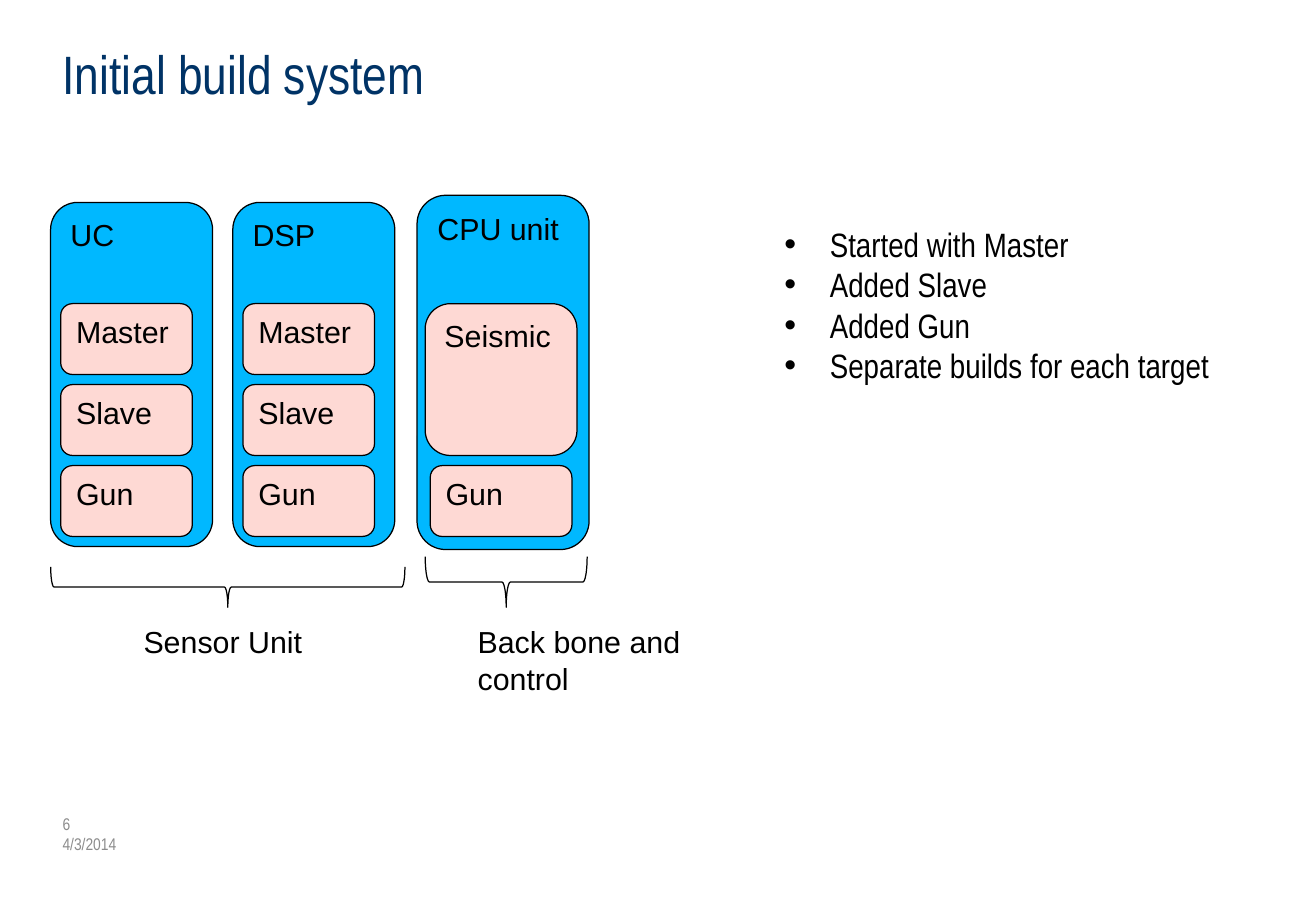
from pptx import Presentation, util as u
from pptx.dml.color import RGBColor
from pptx.enum import shapes, text
from pptx.oxml.ns import qn
from lxml import etree

NAVY = RGBColor(0x00, 0x33, 0x66)
GREY = RGBColor(0x8C, 0x8C, 0x8C)
BLACK = RGBColor(0x00, 0x00, 0x00)
BLUE = RGBColor(0x00, 0xB8, 0xFF)
PINK = RGBColor(0xFE, 0xD9, 0xD4)
WIDE, SLIM = "Arial", "Arial Narrow"

TITLE = "Initial build system"
FOOTER = ["6", "4/3/2014"]
POINTS = ["Started with Master", "Added Slave", "Added Gun",
          "Separate builds for each target"]
TARGETS = [
    ("UC", (50, 200, 160, 340),
     [("Master", 0, 1, 60, 130), ("Slave", 1, 1, 60, 130), ("Gun", 2, 1, 60, 130)]),
    ("DSP", (230, 200, 160, 340),
     [("Master", 0, 1, 240, 130), ("Slave", 1, 1, 240, 130), ("Gun", 2, 1, 240, 130)]),
    ("CPU unit", (412, 193, 170, 350),
     [("Seismic", 0, 2, 420, 150), ("Gun", 2, 1, 425, 140)]),
]
GROUPS = [
    (["Sensor Unit"], (130, 610, 182, 48), (50, 560, 350, 40)),
    (["Back bone and", "control"], (460, 610, 227, 85), (420, 550, 160, 50)),
]
TOP, PITCH, GAP = 300, 80, 10
INDENT = 45
SCALE = 7620


def px(*nums):
    return [u.Emu(round(n * SCALE)) for n in nums]


def write(frame, lines, size, face, color, bullet=False):
    frame.text = "\n".join(lines)
    for para in frame.paragraphs:
        para.alignment = text.PP_ALIGN.LEFT
        if bullet:
            props = para._p.get_or_add_pPr()
            props.set("marL", str(INDENT * SCALE))
            props.set("indent", str(-INDENT * SCALE))
            etree.SubElement(props, qn("a:buFont")).set("typeface", "Arial")
            etree.SubElement(props, qn("a:buChar")).set("char", "•")
        para.font.size = u.Pt(size)
        para.font.name = face
        para.font.color.rgb = color


def label(box, lines, size, face, color, wrap=False, bullet=False):
    frame = slide.shapes.add_textbox(*px(*box)).text_frame
    frame.word_wrap = wrap
    write(frame, lines, size, face, color, bullet)
    return frame


def outline(kind, box):
    shape = slide.shapes.add_shape(kind, *px(*box))
    shape.shadow.inherit = False
    shape.line.color.rgb = BLACK
    shape.line.width = u.Pt(0.75)
    return shape


def block(name, box, fill):
    shape = outline(shapes.MSO_SHAPE.ROUNDED_RECTANGLE, box)
    shape.fill.solid()
    shape.fill.fore_color.rgb = fill
    shape.text_frame.vertical_anchor = text.MSO_ANCHOR.TOP
    write(shape.text_frame, [name], 18, WIDE, BLACK)


def brace(left, top, width, height):
    box = (left + (width - height) / 2, top + (height - width) / 2, height, width)
    shape = outline(shapes.MSO_SHAPE.RIGHT_BRACE, box)
    shape.fill.background()
    shape.rotation = 90


deck = Presentation()
deck.slide_width, deck.slide_height = px(1300, 900)
slide = deck.slides.add_slide(deck.slide_layouts[6])

label((50, 34, 1200, 150), [TITLE], 32, SLIM, NAVY, wrap=True)
foot = label((50, 794, 260, 60), FOOTER, 10, SLIM, GREY, wrap=True)
foot.vertical_anchor = text.MSO_ANCHOR.MIDDLE
label((763, 215, 446, 174), POINTS, 20, SLIM, BLACK, bullet=True)

for name, box, parts in TARGETS:
    block(name, box, BLUE)
    for part, row, span, left, width in parts:
        block(part, (left, TOP + row * PITCH, width, span * PITCH - GAP), PINK)

for lines, box, span in GROUPS:
    brace(*span)
    label(box, lines, 18, WIDE, BLACK)

deck.save("out.pptx")
